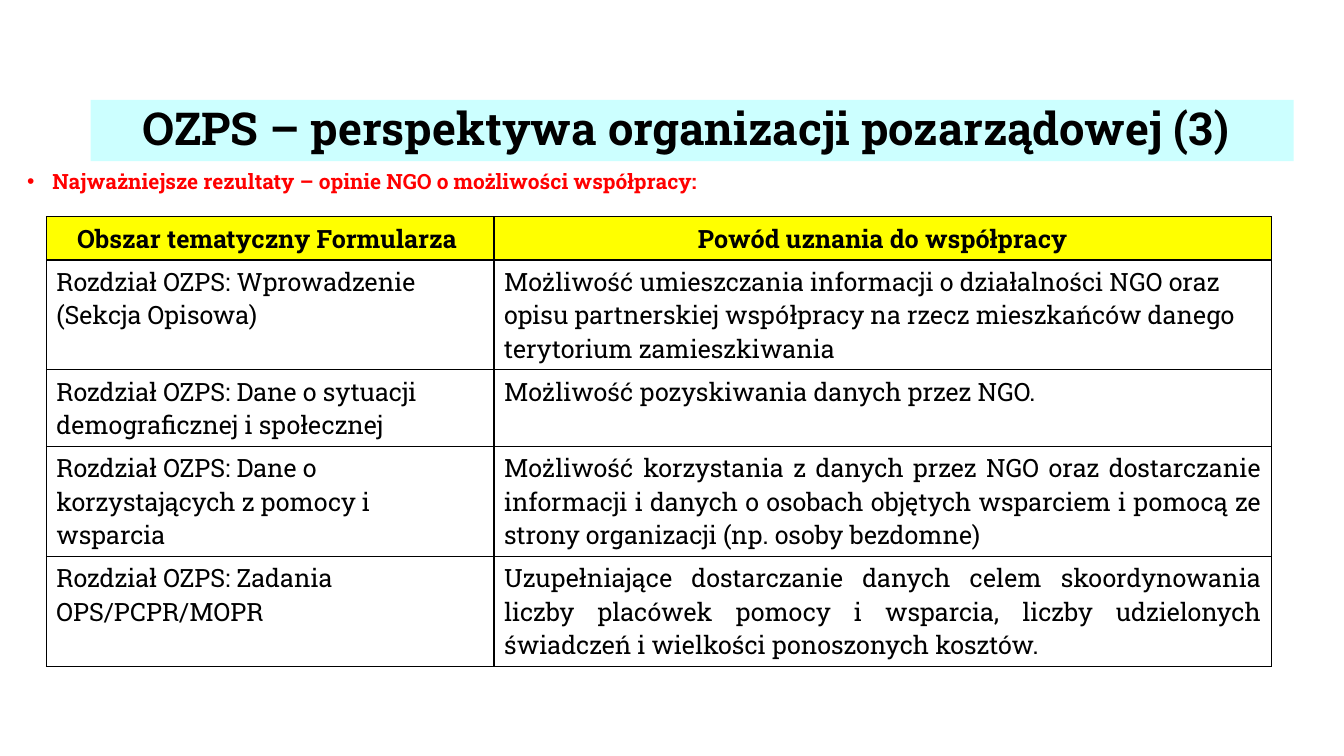
import dataclasses
import typing

import lxml.etree
import pptx
import pptx.dml.color
import pptx.enum.text
import pptx.oxml
import pptx.oxml.ns
import pptx.util

Inches = pptx.util.Inches
Align = pptx.enum.text.PP_ALIGN
Anchor = pptx.enum.text.MSO_ANCHOR

FONT = "Roboto Slab"
COLORS = {"text": "000000", "title": "CCFFFF", "accent": "FF0000", "header": "FFFF00"}
COLUMN_WIDTHS = (4.44, 7.71)
LINE_HEIGHT = 0.33
CELL_PADDING = 0.1


@dataclasses.dataclass(frozen=True)
class Row:
    area: str
    reason: str
    line_count: int = 3
    reason_align: Align = Align.JUSTIFY

    @property
    def height(self) -> float:
        return LINE_HEIGHT * self.line_count + CELL_PADDING


HEADER = Row("Obszar tematyczny Formularza ", "Powód uznania do współpracy", 1, Align.CENTER)
ROWS = [
    Row("Rozdział OZPS: Wprowadzenie (Sekcja Opisowa)",
        "Możliwość umieszczania informacji o działalności NGO oraz opisu partnerskiej "
        "współpracy na rzecz mieszkańców danego terytorium zamieszkiwania",
        reason_align=Align.LEFT),
    Row("Rozdział OZPS: Dane o sytuacji demograficznej i społecznej",
        "Możliwość pozyskiwania danych przez NGO.", line_count=2),
    Row("Rozdział OZPS: Dane o korzystających z pomocy i wsparcia",
        "Możliwość korzystania z danych przez NGO oraz dostarczanie informacji i danych "
        "o osobach objętych wsparciem i pomocą ze strony organizacji (np. osoby bezdomne)"),
    Row("Rozdział OZPS: Zadania OPS/PCPR/MOPR",
        "Uzupełniające dostarczanie danych celem skoordynowania liczby placówek pomocy "
        "i wsparcia, liczby udzielonych świadczeń i wielkości ponoszonych kosztów."),
]


def rgb(name: str) -> pptx.dml.color.RGBColor:
    return pptx.dml.color.RGBColor.from_string(COLORS[name])


def add_bullet(para: typing.Any) -> None:
    props = para._p.get_or_add_pPr()
    props.set("marL", str(Inches(0.25)))
    props.set("indent", str(Inches(-0.25)))
    for tag, name, value in (("a:buFont", "typeface", "Arial"), ("a:buChar", "char", "•")):
        lxml.etree.SubElement(props, pptx.oxml.ns.qn(tag)).set(name, value)


def write(frame: typing.Any, text: str, *, size: float, color: str = "text",
          bold: bool = False, align: Align = Align.LEFT,
          spacing: typing.Optional[float] = None, bullet: bool = False) -> None:
    frame.word_wrap = True
    para = frame.paragraphs[0]
    para.alignment = align
    if spacing is not None:
        para.line_spacing = spacing
    if bullet:
        add_bullet(para)
    span = para.add_run()
    span.text = text
    for font in (para.font, span.font):
        font.name = FONT
        font.size = pptx.util.Pt(size)
        font.bold = bold
        font.color.rgb = rgb(color)


def add_borders(cell: typing.Any) -> None:
    props = cell._tc.get_or_add_tcPr()
    for index, side in enumerate(("lnL", "lnR", "lnT", "lnB")):
        props.insert(index, pptx.oxml.parse_xml(
            f'<a:{side} {pptx.oxml.ns.nsdecls("a")} w="12700"><a:solidFill>'
            f'<a:srgbClr val="{COLORS["text"]}"/></a:solidFill></a:{side}>'))


def add_results_table(page: typing.Any, left: float, top: float) -> None:
    rows = [HEADER, *ROWS]
    table = page.shapes.add_table(
        len(rows), len(COLUMN_WIDTHS), Inches(left), Inches(top),
        Inches(sum(COLUMN_WIDTHS)), Inches(sum(row.height for row in rows))).table
    table.horz_banding = False
    for column, width in zip(table.columns, COLUMN_WIDTHS):
        column.width = Inches(width)
    for row, line in zip(rows, table.rows):
        line.height = Inches(row.height)
        is_header = row is HEADER
        area_align = Align.CENTER if is_header else Align.LEFT
        contents = ((row.area, area_align), (row.reason, row.reason_align))
        for cell, (text, align) in zip(line.cells, contents):
            if is_header:
                cell.fill.solid()
                cell.fill.fore_color.rgb = rgb("header")
            else:
                cell.fill.background()
            add_borders(cell)
            write(cell.text_frame, text, size=18, bold=is_header, align=align)


def main() -> None:
    deck = pptx.Presentation()
    deck.slide_width, deck.slide_height = Inches(13.33), Inches(7.5)
    page = deck.slides.add_slide(deck.slide_layouts[6])

    # Title band
    title = page.shapes.add_textbox(Inches(0.9), Inches(0.99), Inches(11.93), Inches(0.61))
    title.fill.solid()
    title.fill.fore_color.rgb = rgb("title")
    title.text_frame.vertical_anchor = Anchor.MIDDLE
    write(title.text_frame, "OZPS – perspektywa organizacji pozarządowej (3) ",
          size=32.4, bold=True, align=Align.CENTER, spacing=0.9)

    # Lead bullet
    lead = page.shapes.add_textbox(Inches(0.17), Inches(1.65), Inches(13.01), Inches(4.96))
    write(lead.text_frame, "Najważniejsze rezultaty – opinie NGO o możliwości współpracy:",
          size=15, color="accent", bold=True, spacing=0.9, bullet=True)

    # Results table
    add_results_table(page, 0.46, 2.15)
    deck.save("out.pptx")


if __name__ == "__main__":
    main()
